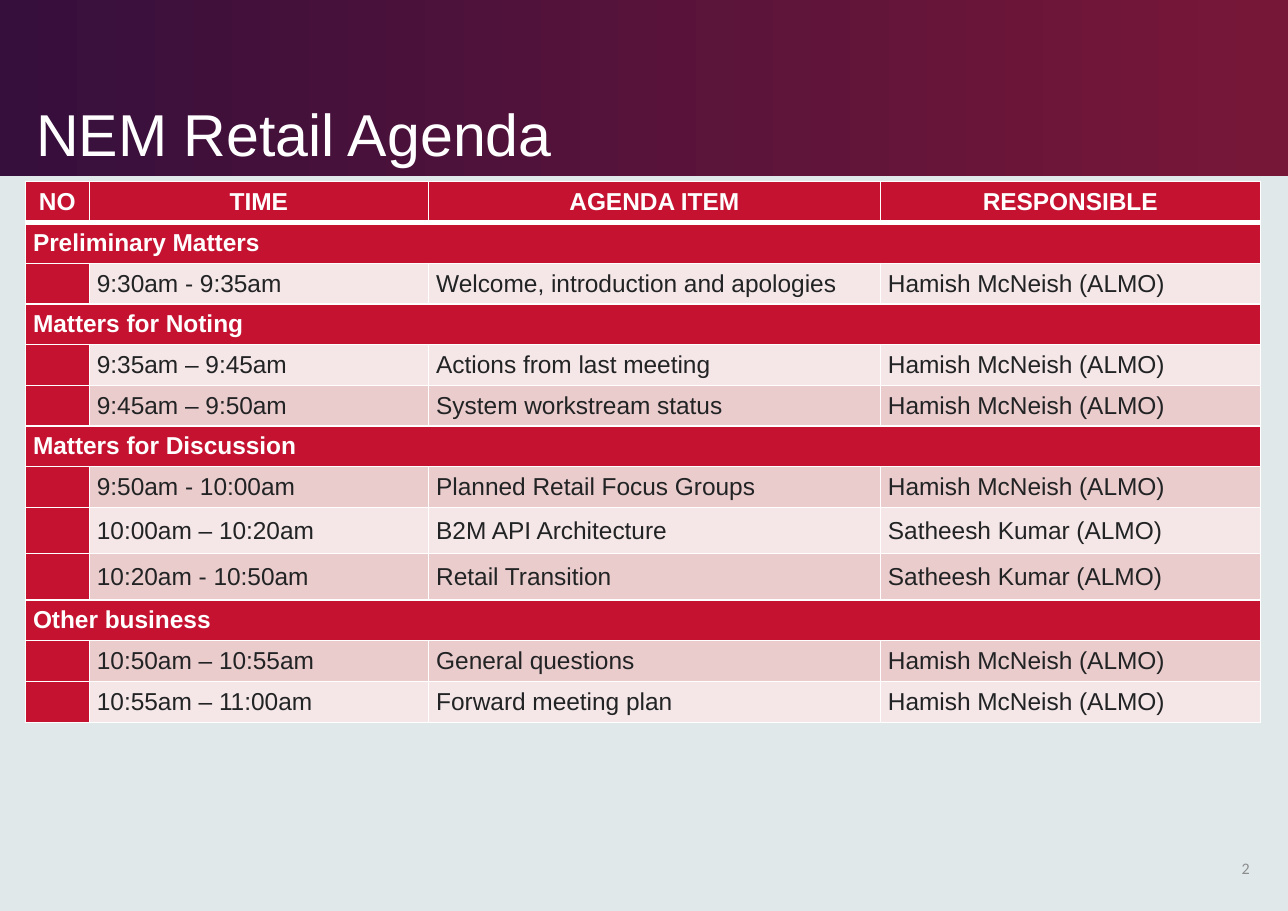
"""Build the retail agenda slide."""
from lxml.etree import SubElement
from pptx import Presentation
from pptx.dml.color import RGBColor
from pptx.enum.shapes import MSO_SHAPE
from pptx.enum.text import MSO_ANCHOR, PP_ALIGN
from pptx.oxml.ns import qn
from pptx.util import Inches, Pt

WIDTH, HEIGHT = 11.69, 8.27
RED, LIGHT, DARK = "C41230", "F5E7E8", "EACCCD"
WHITE, INK, GREY = "FFFFFF", "222324", "8D8D8E"
HEAD = ("NO", "TIME", "AGENDA ITEM", "RESPONSIBLE")
HOST, GUEST = "Hamish McNeish (ALMO)", "Satheesh Kumar (ALMO)"
AGENDA = [
    ("Preliminary Matters", [
        ("9:30am - 9:35am", "Welcome, introduction and apologies", HOST)]),
    ("Matters for Noting", [
        ("9:35am – 9:45am", "Actions from last meeting", HOST),
        ("9:45am – 9:50am", "System workstream status", HOST)]),
    ("Matters for Discussion", [
        ("9:50am - 10:00am", "Planned Retail Focus Groups", HOST),
        ("10:00am – 10:20am", "B2M API Architecture", GUEST),
        ("10:20am - 10:50am", "Retail Transition", GUEST)]),
    ("Other business", [
        ("10:50am – 10:55am", "General questions", HOST),
        ("10:55am – 11:00am", "Forward meeting plan", HOST)]),
]
COLS = (0.58, 3.08, 4.1, 3.45)
ROW, TALL = 0.37, 0.42


def paint(color, hue):
    color.rgb = RGBColor.from_string(hue)


def write(frame, text, size=16, font="Arial", hue=WHITE, bold=False,
          align=PP_ALIGN.LEFT, gap=0, lead=None):
    para = frame.paragraphs[0]
    para.alignment = align
    para.space_before = para.space_after = Pt(gap)
    para.line_spacing = lead
    para.font.size = Pt(size)
    if text:
        run = para.add_run()
        run.text = text
        run.font.name, run.font.size, run.font.bold = font, Pt(size), bold
        paint(run.font.color, hue)


def label(slide, text, left, top, wide, high, anchor, **look):
    box = slide.shapes.add_textbox(*map(Inches, (left, top, wide, high)))
    box.text_frame.word_wrap = True
    box.text_frame.vertical_anchor = anchor
    write(box.text_frame, text, **look)


def edge(cell, top, bottom):
    props = cell._tc.get_or_add_tcPr()
    sides = (("L", 1), ("R", 1), ("T", top), ("B", bottom))
    for spot, (side, wide) in enumerate(sides):
        line = SubElement(props, qn("a:ln" + side), w=str(Pt(wide)))
        fill = SubElement(line, qn("a:solidFill"))
        SubElement(fill, qn("a:srgbClr"), val=WHITE)
        props.insert(spot, line)


def style(cell, text, fill, row, **look):
    cell.margin_left = cell.margin_right = Inches(0.07)
    cell.margin_top = cell.margin_bottom = 0
    cell.vertical_anchor = MSO_ANCHOR.MIDDLE
    cell.fill.solid()
    paint(cell.fill.fore_color, fill)
    edge(cell, 3 if row == 1 else 1, 3 if row == 0 else 1)
    write(cell.text_frame, text, gap=1, **look)


def banner(slide):
    band = slide.shapes.add_shape(
        MSO_SHAPE.RECTANGLE, 0, 0, Inches(WIDTH), Inches(1.6))
    band.shadow.inherit = False
    band.line.fill.background()
    band.fill.gradient()
    band.fill.gradient_angle = 0
    stops = zip(band.fill.gradient_stops, (0, 0.99), ("360F3C", "771738"))
    for stop, place, hue in stops:
        stop.position = place
        paint(stop.color, hue)


def schedule(slide):
    rows = [HEAD]
    for topic, items in AGENDA:
        rows.append((topic, "", "", ""))
        rows += [("", *item) for item in items]
    highs = [TALL if GUEST in row else ROW for row in rows]
    table = slide.shapes.add_table(
        len(rows), len(COLS), Inches(0.23), Inches(1.65),
        Inches(sum(COLS)), Inches(sum(highs))).table
    for col, wide in zip(table.columns, COLS):
        col.width = Inches(wide)
    for r, row in enumerate(rows):
        table.rows[r].height = Inches(highs[r])
        topic = r > 0 and row[0]
        for c, text in enumerate(row):
            strong = r == 0 or topic or c == 0
            fill = RED if strong else DARK if r % 2 else LIGHT
            style(table.cell(r, c), text, fill, r, bold=bool(strong),
                  hue=WHITE if strong else INK,
                  align=PP_ALIGN.LEFT if r else PP_ALIGN.CENTER)
        if topic:
            table.cell(r, 0).merge(table.cell(r, len(COLS) - 1))


def main():
    deck = Presentation()
    deck.slide_width, deck.slide_height = Inches(WIDTH), Inches(HEIGHT)
    slide = deck.slides.add_slide(deck.slide_layouts[6])
    slide.background.fill.solid()
    paint(slide.background.fill.fore_color, "E0E8EA")
    banner(slide)
    label(slide, "NEM Retail Agenda", 0.23, 0.16, 8.63, 1.43,
          MSO_ANCHOR.BOTTOM, size=38.6, lead=0.9)
    label(slide, "2", 10.89, 7.66, 0.55, 0.44, MSO_ANCHOR.MIDDLE,
          size=10.5, font="Calibri", hue=GREY, align=PP_ALIGN.RIGHT)
    schedule(slide)
    deck.save("out.pptx")


if __name__ == "__main__":
    main()
